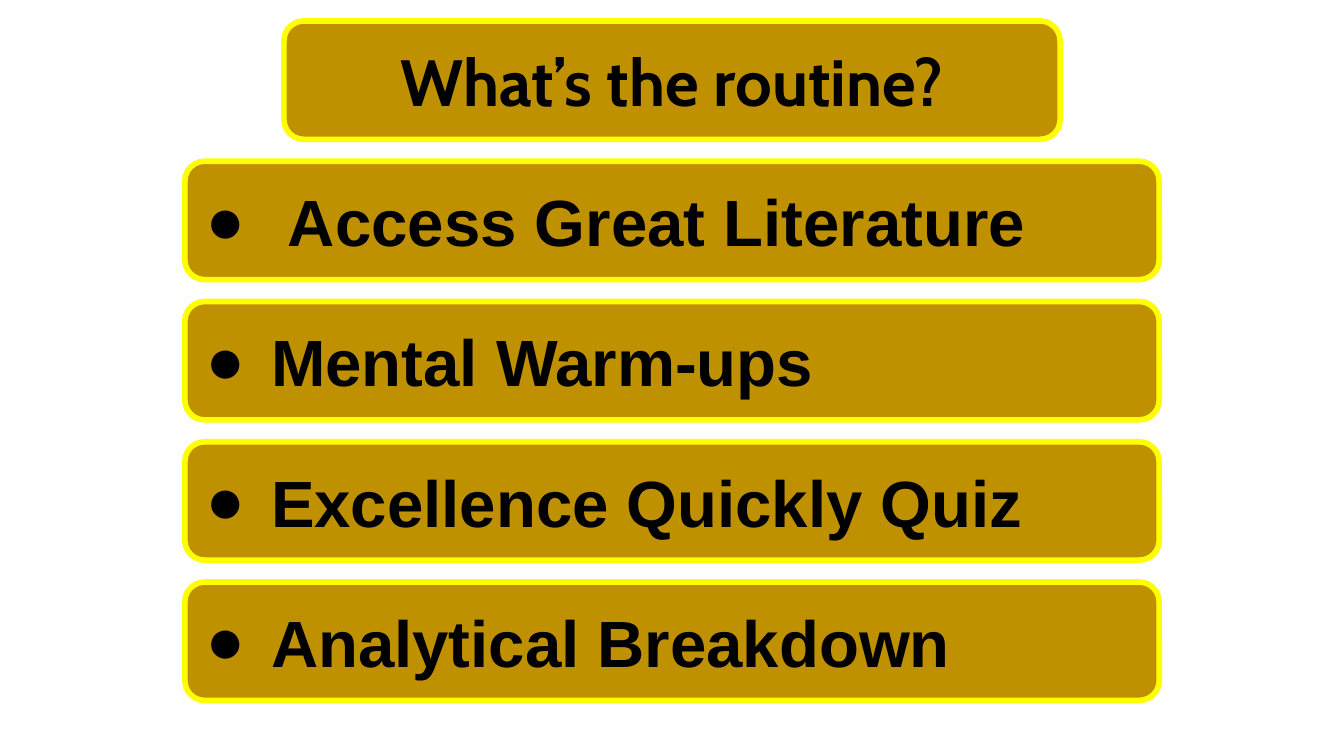
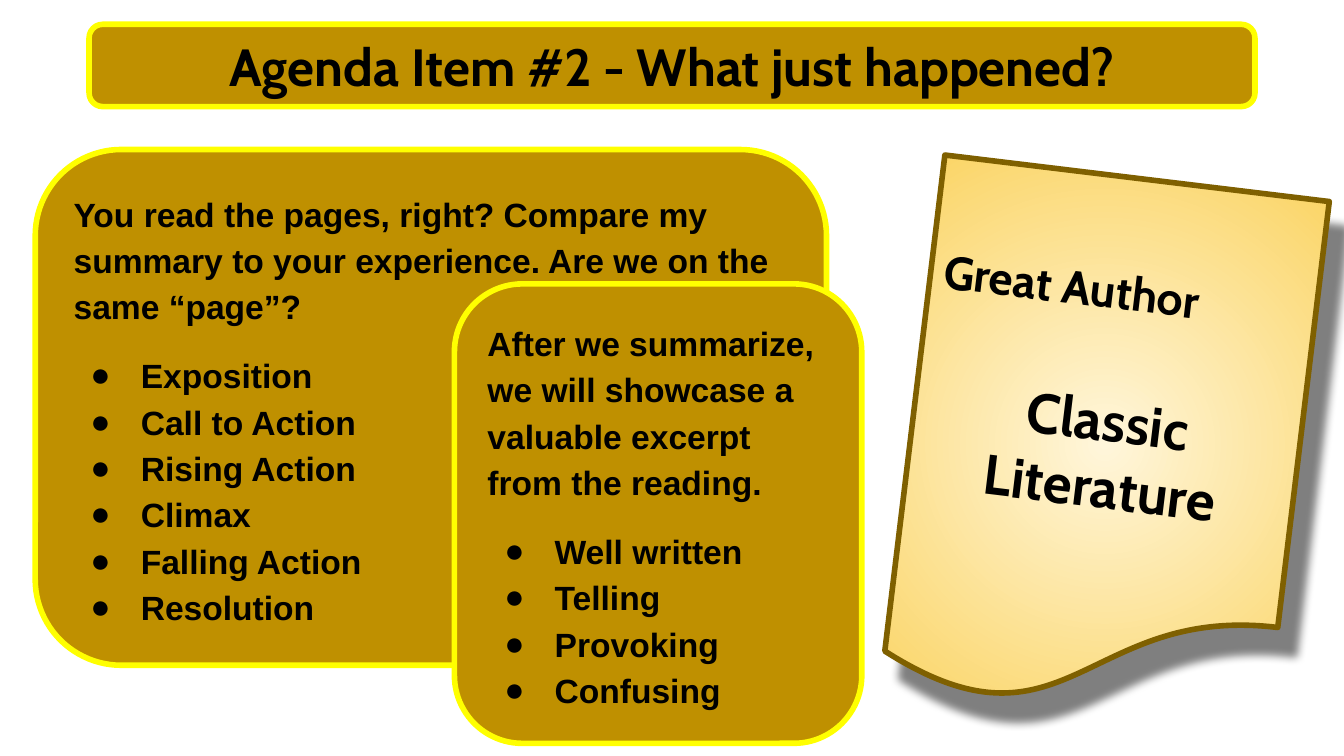
"""Build the class routine and agenda slides."""
import lxml.etree
import pptx
import pptx.dml.color
import pptx.enum.shapes
import pptx.enum.text
import pptx.oxml.ns
import pptx.util

PX = 5715
GOLD, YELLOW, BLACK = "BF9000", "FFFF00", "000000"
BROWN, CREAM, AMBER = "7F6000", "FFF6DB", "FAD25C"
BODY_FONT, TITLE_FONT = "Arial", "Cabin"
SHAPES = pptx.enum.shapes.MSO_SHAPE
ALIGN = pptx.enum.text.PP_ALIGN


def px(length):
    """Turn px into EMU."""
    return pptx.util.Emu(length * PX)


def rgb(value):
    """Turn a hex string into a colour."""
    return pptx.dml.color.RGBColor.from_string(value)


def add_node(parent, tag, **attributes):
    """Append a DrawingML element to its parent."""
    node = lxml.etree.SubElement(parent, pptx.oxml.ns.qn(tag))
    for name, value in attributes.items():
        node.set(name, str(value))
    return node


def add_bullet(paragraph, margin, hanging):
    """Give a paragraph a round bullet with a hanging indent."""
    properties = paragraph._p.get_or_add_pPr()
    properties.set("marL", str(px(margin)))
    properties.set("indent", str(px(-hanging)))
    add_node(add_node(properties, "a:buClr"), "a:srgbClr", val=BLACK)
    add_node(properties, "a:buFont", typeface=BODY_FONT)
    add_node(properties, "a:buChar", char="●")


def write_text(panel, text, size, font=BODY_FONT, align=ALIGN.LEFT,
               bullet=None, spacing=None, before=None):
    """Write one bold paragraph into a panel."""
    frame = panel.text_frame
    first = frame.paragraphs[0]
    paragraph = frame.add_paragraph() if first.runs else first
    if bullet:
        add_bullet(paragraph, *bullet)
    paragraph.alignment = align
    if spacing:
        paragraph.line_spacing = spacing
    if before:
        paragraph.space_before = pptx.util.Pt(before)
    run = paragraph.add_run()
    run.text = text
    run.font.size = pptx.util.Pt(size)
    run.font.name = font
    run.font.bold = True
    run.font.color.rgb = rgb(BLACK)


def add_panel(slide, left, top, width, height,
              outline=YELLOW, kind=SHAPES.ROUNDED_RECTANGLE):
    """Add a gold panel with a thick outline and even insets."""
    panel = slide.shapes.add_shape(
        kind, px(left), px(top), px(width), px(height))
    panel.shadow.inherit = False
    panel.fill.solid()
    panel.fill.fore_color.rgb = rgb(GOLD)
    panel.line.color.rgb = rgb(outline)
    panel.line.width = pptx.util.Pt(3)
    frame = panel.text_frame
    frame.word_wrap = True
    frame.vertical_anchor = pptx.enum.text.MSO_ANCHOR.MIDDLE
    frame.margin_left = frame.margin_right = px(16)
    frame.margin_top = frame.margin_bottom = px(16)
    return panel


def add_title(slide, text, left, top, width, height, size):
    """Add a panel with a centred title."""
    banner = add_panel(slide, left, top, width, height)
    write_text(banner, text, size=size, font=TITLE_FONT, align=ALIGN.CENTER)


def add_list_panel(slide, left, top, width, height, intro, items):
    """Add a panel with an introduction and a bulleted list."""
    panel = add_panel(slide, left, top, width, height)
    write_text(panel, intro, size=18, spacing=1.15)
    for index, item in enumerate(items):
        write_text(panel, item, size=18, spacing=1.15, bullet=(80, 60),
                   before=0 if index else 12)


def glow_from_centre(panel, inner, outer):
    """Fill a panel with a gradient that spreads from its centre."""
    panel.fill.gradient()
    for stop, colour in zip(panel.fill.gradient_stops, (inner, outer)):
        stop.color.rgb = rgb(colour)
    gradient = panel._element.spPr.find(pptx.oxml.ns.qn("a:gradFill"))
    gradient.remove(gradient.find(pptx.oxml.ns.qn("a:lin")))
    circle = add_node(gradient, "a:path", path="circle")
    add_node(circle, "a:fillToRect", l=50000, t=50000, r=50000, b=50000)


def cast_shadow(panel, blur, distance, angle):
    """Give a panel a soft, half transparent black shadow."""
    effects = panel._element.spPr.find(pptx.oxml.ns.qn("a:effectLst"))
    shadow = add_node(effects, "a:outerShdw", blurRad=pptx.util.Pt(blur),
                      dist=pptx.util.Pt(distance), dir=angle * 60000,
                      algn="bl", rotWithShape=0)
    colour = add_node(shadow, "a:srgbClr", val=BLACK)
    add_node(colour, "a:alpha", val=50000)


def add_book_page(slide):
    """Add the tilted page that names the author and the book."""
    page = add_panel(slide, 1085, 210, 461, 637, outline=BROWN,
                     kind=SHAPES.FLOWCHART_DOCUMENT)
    page.rotation = 6.9
    glow_from_centre(page, CREAM, AMBER)
    cast_shadow(page, blur=4.5, distance=16.5, angle=59)
    write_text(page, "Great Author", size=25, font=TITLE_FONT)
    write_text(page, "Classic Literature", size=30, font=TITLE_FONT,
               align=ALIGN.CENTER, before=36)


def build_routine(slide):
    """Build the slide that lists the class routine."""
    add_title(slide, "What’s the routine?", 338, 25, 924, 141, size=35)
    steps = [
        ("Access Great Literature", (100, 98)),
        ("Mental Warm-ups", (80, 78)),
        ("Excellence Quickly Quiz", (80, 78)),
        ("Analytical Breakdown", (80, 78)),
    ]
    for row, (step, bullet) in enumerate(steps, start=1):
        bar = add_panel(slide, 220, 25 + row * 167, 1160, 141)
        write_text(bar, step, size=35, bullet=bullet)


def build_agenda(slide):
    """Build the slide for the second agenda item."""
    add_title(slide, "Agenda Item #2 - What just happened?",
              106, 29, 1388, 98, size=28)
    add_list_panel(
        slide, 42, 178, 942, 614,
        "You read the pages, right? Compare my summary to your experience. "
        "Are we on the same “page”?",
        ["Exposition", "Call to Action", "Rising Action", "Climax",
         "Falling Action", "Resolution"])
    add_list_panel(
        slide, 541, 338, 485, 547,
        "After we summarize, we will showcase a valuable excerpt "
        "from the reading.",
        ["Well written", "Telling", "Provoking", "Confusing"])
    add_book_page(slide)


def main():
    """Build both slides and save the deck."""
    deck = pptx.Presentation()
    deck.slide_width, deck.slide_height = px(1600), px(900)
    blank = deck.slide_layouts[6]
    for build in (build_routine, build_agenda):
        build(deck.slides.add_slide(blank))
    deck.save("out.pptx")


if __name__ == "__main__":
    main()
